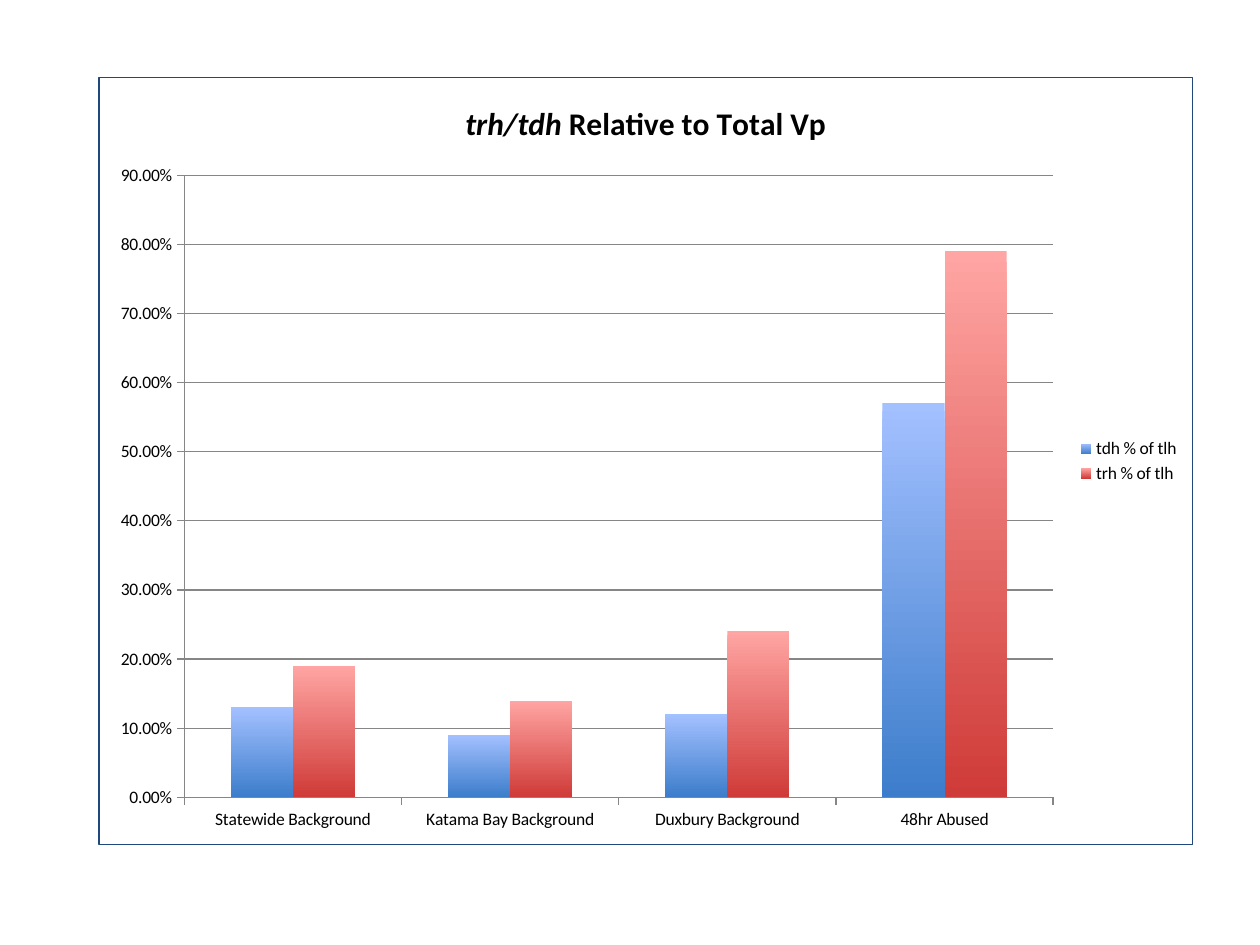
import pptx
import pptx.chart.data
import pptx.dml.color
import pptx.enum.chart
import pptx.oxml
import pptx.oxml.ns
import pptx.util
from pptx.util import Inches

COLOURS = {
    "text": "000000",
    "line": "868686",
    "border": "1F497D",
    "background": "FFFFFF",
}
CATEGORIES = ["Statewide Background", "Katama Bay Background",
              "Duxbury Background", "48hr Abused"]
# Name, values, top and bottom colour of the bars
SERIES = [
    ("tdh % of tlh", [0.13, 0.09, 0.12, 0.57], ("A3C0FF", "3C7DCB")),
    ("trh % of tlh", [0.19, 0.14, 0.24, 0.79], ("FFA5A3", "CF3B38")),
]
NAMESPACES = pptx.oxml.ns.nsdecls("c", "a")


def rgb(name):
    return pptx.dml.color.RGBColor.from_string(COLOURS.get(name, name))


def set_format(target, values):
    for name, value in values.items():
        setattr(target, name, value)


def add_title(chart):
    para = chart.chart_title.text_frame.paragraphs[0]
    for text, italic in (("trh/tdh", True), (" Relative to Total Vp", False)):
        span = para.add_run()
        span.text = text
        set_format(span.font, {"name": "Calibri", "size": pptx.util.Pt(18),
                               "bold": True, "italic": italic})
        span.font.color.rgb = rgb("text")
    chart.chart_title.include_in_layout = False


def style_line(line):
    line.color.rgb = rgb("line")
    line.width = pptx.util.Pt(0.75)


def style_axes(chart):
    ticks = pptx.enum.chart.XL_TICK_MARK
    for axis in (chart.category_axis, chart.value_axis):
        set_format(axis, {"major_tick_mark": ticks.OUTSIDE,
                          "minor_tick_mark": ticks.NONE})
        style_line(axis.format.line)
    set_format(chart.value_axis, {"minimum_scale": 0, "maximum_scale": 0.9,
                                  "major_unit": 0.1,
                                  "has_major_gridlines": True})
    style_line(chart.value_axis.major_gridlines.format.line)
    set_format(chart.value_axis.tick_labels,
               {"number_format": "0.00%", "number_format_is_linked": False})


def style_bars(chart):
    plot = chart.plots[0]
    set_format(plot, {"gap_width": 150, "overlap": 0,
                      "vary_by_categories": False})
    for series, (_, _, shades) in zip(plot.series, SERIES):
        series.invert_if_negative = False
        fill = series.format.fill
        fill.gradient()
        fill.gradient_angle = 270
        for stop, shade in zip(fill.gradient_stops, shades):
            stop.color.rgb = rgb(shade)


def frame_chart(chart):
    """Draw the background and border of the whole chart."""
    chart._chartSpace.chart.addnext(pptx.oxml.parse_xml(
        f'<c:spPr {NAMESPACES}><a:solidFill>'
        f'<a:srgbClr val="{COLOURS["background"]}"/></a:solidFill>'
        f'<a:ln w="{pptx.util.Pt(0.75)}"><a:solidFill>'
        f'<a:srgbClr val="{COLOURS["border"]}"/></a:solidFill></a:ln></c:spPr>'))


def add_bar_chart(page, left, top, width, height):
    data = pptx.chart.data.CategoryChartData(number_format="0.00%")
    data.categories = CATEGORIES
    for name, values, _ in SERIES:
        data.add_series(name, values)
    chart = page.shapes.add_chart(
        pptx.enum.chart.XL_CHART_TYPE.COLUMN_CLUSTERED,
        left, top, width, height, data).chart
    set_format(chart.font, {"name": "Calibri", "size": pptx.util.Pt(10)})
    chart.font.color.rgb = rgb("text")
    set_format(chart, {"has_title": True, "has_legend": True})
    set_format(chart.legend, {
        "position": pptx.enum.chart.XL_LEGEND_POSITION.RIGHT,
        "include_in_layout": False})
    add_title(chart)
    style_axes(chart)
    style_bars(chart)
    frame_chart(chart)


def main():
    deck = pptx.Presentation()
    set_format(deck, {"slide_width": Inches(10), "slide_height": Inches(7.5)})
    page = deck.slides.add_slide(deck.slide_layouts[6])
    add_bar_chart(page, Inches(0.78), Inches(0.61), Inches(8.69), Inches(6.1))
    deck.save("out.pptx")


if __name__ == "__main__":
    main()
